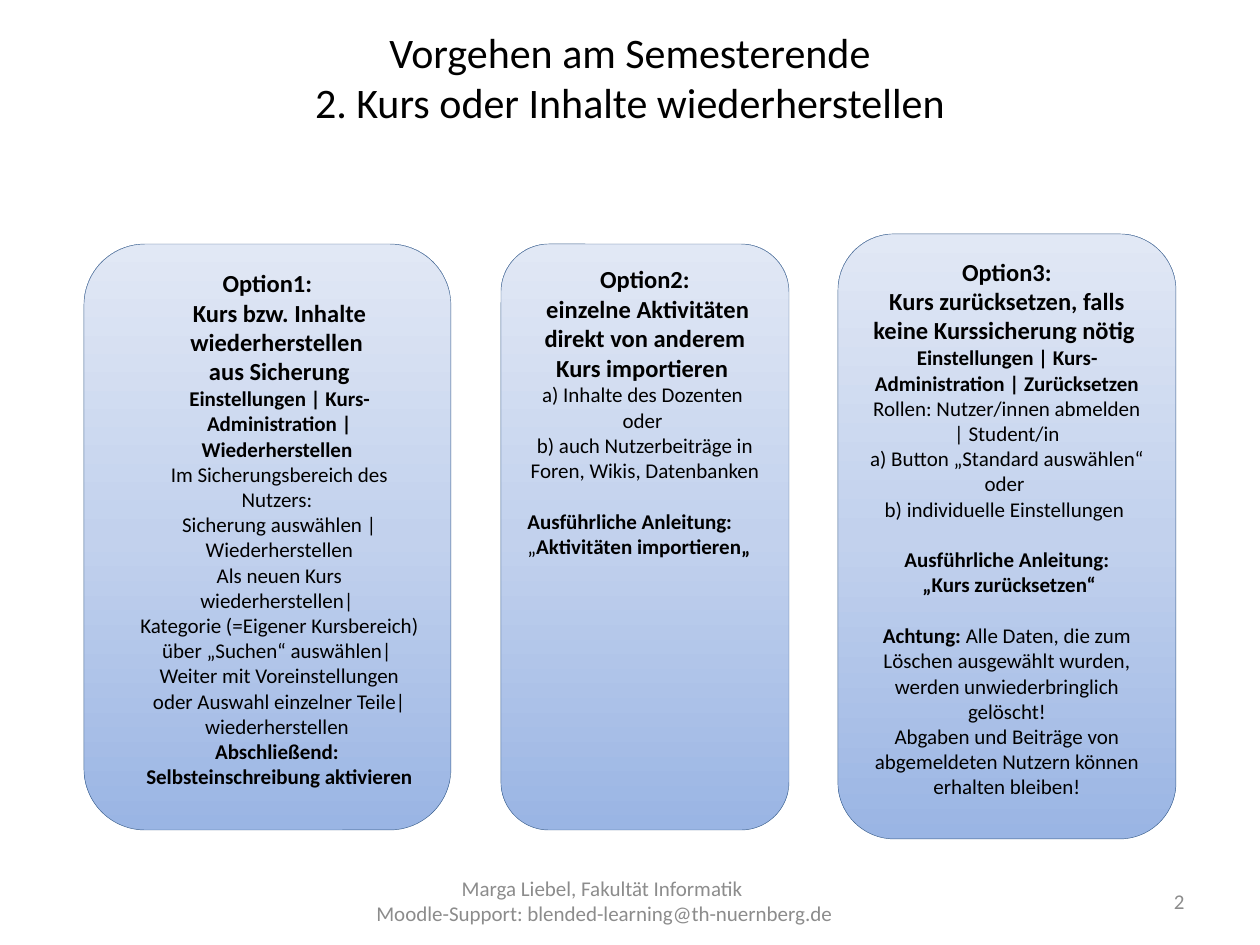
from lxml import etree
from pptx import Presentation
from pptx.dml.color import RGBColor
from pptx.enum.shapes import MSO_SHAPE
from pptx.enum.text import MSO_ANCHOR, MSO_AUTO_SIZE, PP_ALIGN
from pptx.oxml.ns import qn
from pptx.util import Pt

ROUND = MSO_SHAPE.ROUNDED_RECTANGLE
TOP, MIDDLE = MSO_ANCHOR.TOP, MSO_ANCHOR.MIDDLE
LEFT, CENTER, RIGHT = PP_ALIGN.LEFT, PP_ALIGN.CENTER, PP_ALIGN.RIGHT
NO_FIT = MSO_AUTO_SIZE.NONE

PX = 914400 / 126
COLORS = {"text": "000000", "muted": "8C8C8C", "paper": "FFFFFF", "line": "3A5F8C",
          "deep": "9AB5E4", "mid": "C2D1ED", "pale": "E1E8F5"}
FADE = [(0, "deep"), (50, "mid"), (100, "pale")]
GAP = 14.6  # one empty 12 pt line


def emu(*lengths):
    return [round(n * PX) for n in lengths]


def rgb(name):
    return RGBColor.from_string(COLORS[name])


class Deck:
    font = "Calibri"

    def __init__(self, slide):
        self.slide = slide

    def fill_text(self, frame, paras, color="text", anchor=TOP, hang=0):
        """Each para is (align, runs); each run is (text, size, bold)."""
        frame.word_wrap = True
        frame.auto_size = NO_FIT
        frame.vertical_anchor = anchor
        for i, (align, runs) in enumerate(paras):
            para = frame.add_paragraph() if i else frame.paragraphs[0]
            para.alignment = align
            para.space_before = Pt(GAP if i else 0)
            if hang:
                props = para._p.get_or_add_pPr()
                props.set("marL", str(emu(hang)[0]))
                props.set("indent", str(emu(-hang)[0]))
            for text, size, bold in runs:
                self.add_text(para, text, size, bold, color)

    def add_text(self, para, text, size, bold, color):
        for i, line in enumerate(text.split("\n")):
            if i:
                para.add_line_break()
                etree.SubElement(para._p[-1], qn("a:rPr"), sz=str(size * 100))
            if line:
                run = para.add_run()
                run.text = line
                font = run.font
                font.name, font.size, font.bold = self.font, Pt(size), bold
                font.color.rgb = rgb(color)

    def title(self, box, text):
        shape = self.slide.shapes.title
        shape.left, shape.top, shape.width, shape.height = emu(*box)
        shape.fill.solid()
        shape.fill.fore_color.rgb = rgb("paper")
        self.fill_text(shape.text_frame, [(CENTER, [(text, 24, False)])], anchor=MIDDLE)

    def label(self, box, text, align):
        shape = self.slide.shapes.add_textbox(*emu(*box))
        self.fill_text(shape.text_frame, [(align, [(text, 12, False)])], "muted", MIDDLE)

    def card(self, box, paras, hang=0):
        shape = self.slide.shapes.add_shape(ROUND, *emu(*box))
        shape.shadow.inherit = False
        shape.line.color.rgb = rgb("line")
        shape.line.width = Pt(0.25)
        self.fade(shape)
        self.fill_text(shape.text_frame, paras, hang=hang)

    def fade(self, shape):
        shape.fill.gradient()
        shape.fill.gradient_angle = 90
        stops = shape._element.spPr.find(qn("a:gradFill")).find(qn("a:gsLst"))
        for old in list(stops):
            stops.remove(old)
        for pos, name in FADE:
            stop = etree.SubElement(stops, qn("a:gs"), pos=str(pos * 1000))
            etree.SubElement(stop, qn("a:srgbClr"), val=COLORS[name])


def main():
    prs = Presentation()
    prs.slide_width, prs.slide_height = emu(1260, 945)
    deck = Deck(prs.slides.add_slide(prs.slide_layouts[5]))

    # Title
    deck.title((63, 37, 1134, 79),
               "Vorgehen am Semesterende\n2. Kurs oder Inhalte wiederherstellen")

    # Option 1: restore from a backup
    deck.card((84, 244, 367, 586), [
        (CENTER, [
            ("Option1:\nKurs bzw. Inhalte wiederherstellen \naus Sicherung\n", 14, True),
            ("Einstellungen | Kurs-Administration | Wiederherstellen \n", 12, True),
            ("Im Sicherungsbereich des Nutzers: \n"
             "Sicherung auswählen | Wiederherstellen\n"
             "Als neuen Kurs wiederherstellen| \n"
             "Kategorie (=Eigener Kursbereich) über „Suchen“ auswählen| \n"
             "Weiter mit Voreinstellungen oder Auswahl einzelner Teile| "
             "wiederherstellen \n", 12, False),
            ("Abschließend: \nSelbsteinschreibung aktivieren", 12, True)]),
    ], hang=24)

    # Option 3: reset the course
    deck.card((838, 234, 338, 605), [
        (CENTER, [
            ("Option3:\nKurs zurücksetzen, falls keine Kurssicherung nötig \n", 14, True),
            ("Einstellungen | Kurs-Administration | Zurücksetzen\n", 12, True),
            ("Rollen: Nutzer/innen abmelden | Student/in\n"
             "a) Button „Standard auswählen“ oder \n"
             "b) individuelle Einstellungen ", 12, False)]),
        (CENTER, [("Ausführliche Anleitung:\n „Kurs zurücksetzen“", 12, True)]),
        (CENTER, [
            ("Achtung: ", 12, True),
            ("Alle Daten, die zum Löschen ausgewählt wurden, werden "
             "unwiederbringlich gelöscht!\n"
             "Abgaben und Beiträge von abgemeldeten Nutzern können "
             "erhalten bleiben!", 12, False)]),
    ])

    # Page number and footer
    deck.label((903, 876, 294, 50), "2", RIGHT)
    deck.label((292, 876, 625, 50),
               "Marga Liebel, Fakultät Informatik \n"
               "Moodle-Support: blended-learning@th-nuernberg.de", CENTER)

    # Option 2: import single activities
    deck.card((501, 244, 288, 586), [
        (CENTER, [
            ("Option2:\n einzelne Aktivitäten direkt von anderem Kurs importieren \n",
             14, True),
            ("a) Inhalte des Dozenten \noder \n"
             "b) auch Nutzerbeiträge in Foren, Wikis, Datenbanken", 12, False)]),
        (LEFT, [
            ("Ausführliche Anleitung:\n", 12, True),
            ("„", 12, False),
            ("Aktivitäten importieren„", 12, True)]),
    ])

    prs.save("out.pptx")


if __name__ == "__main__":
    main()
